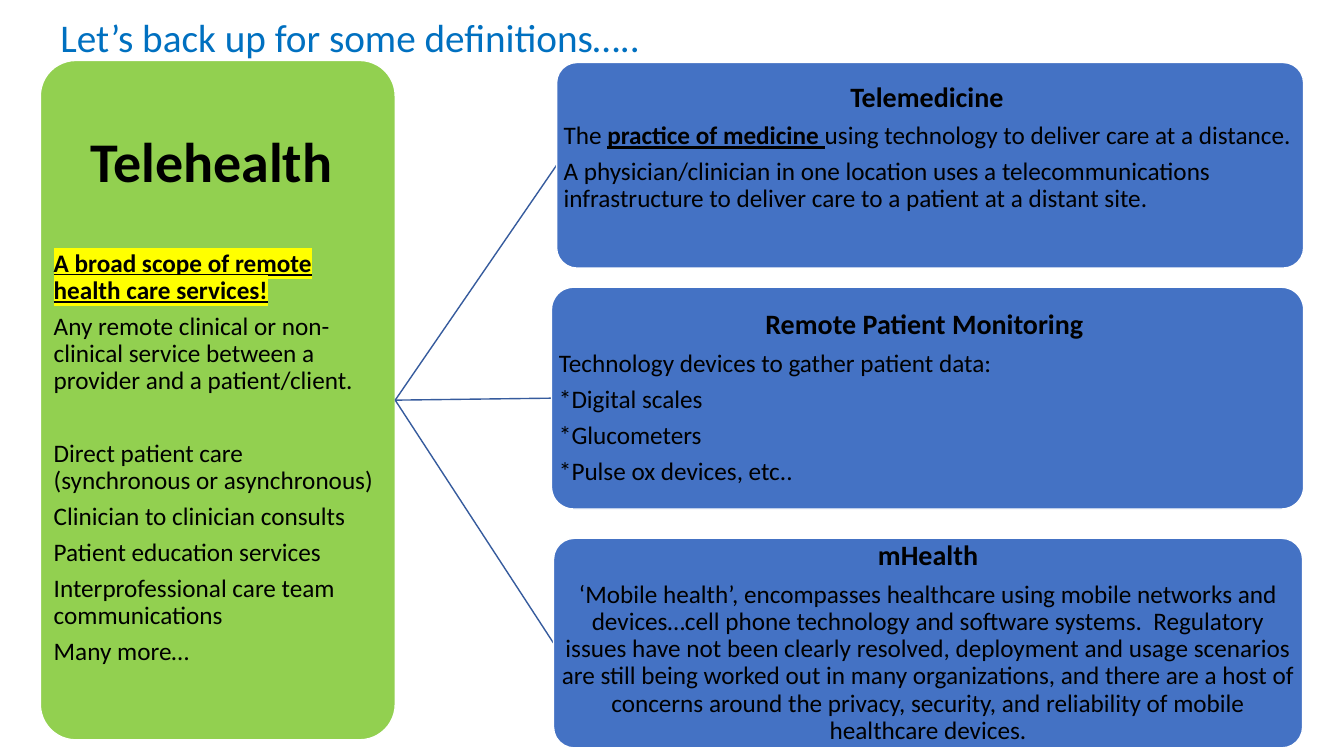
from dataclasses import dataclass

from lxml import etree
from pptx import Presentation
from pptx.dml.color import RGBColor
from pptx.enum.shapes import MSO_CONNECTOR, MSO_SHAPE
from pptx.enum.text import MSO_ANCHOR, PP_ALIGN
from pptx.oxml.ns import qn
from pptx.util import Inches, Pt

LEFT, CENTER = PP_ALIGN.LEFT, PP_ALIGN.CENTER
TOP, MIDDLE = MSO_ANCHOR.TOP, MSO_ANCHOR.MIDDLE
ROUNDED = MSO_SHAPE.ROUNDED_RECTANGLE
STRAIGHT = MSO_CONNECTOR.STRAIGHT
TITLE_ONLY = 5


@dataclass(frozen=True)
class Theme:
    font: str = "Calibri"
    title: str = "0070C0"
    text: str = "000000"
    hub: str = "92D050"
    branch: str = "4472C4"
    outline: str = "FFFFFF"
    link: str = "365B9D"
    marker: str = "FFFF00"
    title_size: int = 28
    hub_size: int = 40
    heading_size: int = 20
    body_size: int = 18
    line_spacing: float = 0.9
    space_ratio: float = 0.35


@dataclass(frozen=True)
class Box:
    left: float
    top: float
    width: float
    height: float

    @property
    def right(self):
        return self.left + self.width

    @property
    def middle(self):
        return self.top + self.height / 2


@dataclass(frozen=True)
class Para:
    """Spans are (text, style) pairs; gap is extra space below in points."""
    spans: tuple
    size: int
    align: PP_ALIGN = LEFT
    gap: float = 0


THEME = Theme()
PLAIN = {}
BOLD = {"bold": True}
STRONG = {"bold": True, "underline": True}
MARKED = {**STRONG, "marker": THEME.marker}
EMPTY_LINE = 25.8


def body(text, style=PLAIN, align=LEFT, gap=0):
    return Para(((text, style),), THEME.body_size, align, gap)


def heading(text, size=THEME.heading_size, gap=0):
    return Para(((text, BOLD),), size, CENTER, gap)


TITLE = "Let’s back up for some definitions….."
TITLE_BOX = Box(0.5, 0.08, 6.02, 0.57)

HUB_BOX = Box(0.4, 0.6, 3.52, 6.74)
HUB_TEXT = (
    heading("Telehealth ", THEME.hub_size, EMPTY_LINE),
    body("A broad scope of remote health care services!", MARKED),
    body("Any remote clinical or non-clinical service between a "
         "provider and a patient/client.", gap=EMPTY_LINE),
    body("Direct patient care (synchronous or asynchronous)"),
    body("Clinician to clinician consults"),
    body("Patient education services"),
    body("Interprofessional care team communications"),
    body("Many more…"),
)

# Each branch: box, paragraphs, extra room below the text in inches
BRANCHES = (
    (Box(5.52, 0.62, 7.41, 2.04), (
        heading("Telemedicine "),
        Para((("The ", PLAIN), ("practice of medicine ", STRONG),
              ("using technology to deliver care at a distance.", PLAIN)),
             THEME.body_size),
        body("A physician/clinician in one location uses a telecommunications "
             "infrastructure to deliver care to a patient at a distant site."),
    ), 0.34),
    (Box(5.47, 2.85, 7.46, 2.2), (
        heading("Remote Patient Monitoring "),
        body("Technology devices to gather patient data:"),
        body("*Digital scales"),
        body("*Glucometers"),
        body("*Pulse ox devices, etc.."),
    ), 0),
    (Box(5.49, 5.34, 7.43, 2.08), (
        heading("mHealth"),
        body("‘Mobile health’, encompasses healthcare using mobile networks "
             "and devices…cell phone technology and software systems.  "
             "Regulatory issues have not been clearly resolved, deployment and "
             "usage scenarios are still being worked out in many organizations, "
             "and there are a host of concerns around the privacy, security, "
             "and reliability of mobile healthcare devices.", align=CENTER),
    ), 0),
)


def format_frame(frame, anchor, wrap, **margins):
    frame.vertical_anchor = anchor
    frame.word_wrap = wrap
    for side, inches in margins.items():
        setattr(frame, f"margin_{side}", Inches(inches))


def add_span(paragraph, text, size, color, marker=None, **style):
    span = paragraph.add_run()
    span.text = text
    values = {"name": THEME.font, "size": Pt(size), "bold": False, **style}
    for name, value in values.items():
        setattr(span.font, name, value)
    span.font.color.rgb = RGBColor.from_string(color)
    if marker:
        highlight = etree.Element(qn("a:highlight"))
        etree.SubElement(highlight, qn("a:srgbClr")).set("val", marker)
        span._r.rPr.find(qn("a:solidFill")).addnext(highlight)


def write_paragraphs(frame, paras):
    for index, para in enumerate(paras):
        paragraph = frame.add_paragraph() if index else frame.paragraphs[0]
        values = {"alignment": para.align,
                  "line_spacing": THEME.line_spacing,
                  "space_after": Pt(para.size * THEME.space_ratio + para.gap)}
        for name, value in values.items():
            setattr(paragraph, name, value)
        for text, style in para.spans:
            add_span(paragraph, text, para.size, THEME.text, **style)


def place_title(page, box):
    title = page.shapes.title
    for name in ("left", "top", "width", "height"):
        setattr(title, name, Inches(getattr(box, name)))
    format_frame(title.text_frame, TOP, False,
                 left=0.1, right=0.1, top=0.05, bottom=0.05)
    paragraph = title.text_frame.paragraphs[0]
    paragraph.alignment = LEFT
    add_span(paragraph, TITLE, THEME.title_size, THEME.title)


def add_card(page, box, paras, color, inset, room_below=0):
    """The rounded corners add their own inset to the one given."""
    card = page.shapes.add_shape(ROUNDED, Inches(box.left), Inches(box.top),
                                 Inches(box.width), Inches(box.height))
    card.adjustments[0] = 0.1
    card.shadow.inherit = False
    card.fill.solid()
    card.fill.fore_color.rgb = RGBColor.from_string(color)
    card.line.color.rgb = RGBColor.from_string(THEME.outline)
    card.line.width = Pt(1)
    format_frame(card.text_frame, MIDDLE, True, left=inset, right=inset,
                 top=inset, bottom=inset + room_below)
    write_paragraphs(card.text_frame, paras)


def add_link(page, start, end):
    """Joins the right side of one box to the left side of another."""
    link = page.shapes.add_connector(
        STRAIGHT, Inches(start.right), Inches(start.middle),
        Inches(end.left), Inches(end.middle))
    link.line.color.rgb = RGBColor.from_string(THEME.link)
    link.line.width = Pt(1)
    etree.SubElement(link._element.spPr, qn("a:effectLst"))


def build_definitions(page):
    place_title(page, TITLE_BOX)
    add_card(page, HUB_BOX, HUB_TEXT, THEME.hub, 0.03)
    for box, paras, room_below in BRANCHES:
        add_link(page, HUB_BOX, box)
        add_card(page, box, paras, THEME.branch, 0.01, room_below)


def main():
    deck = Presentation()
    deck.slide_width, deck.slide_height = Inches(13.33), Inches(7.5)
    build_definitions(deck.slides.add_slide(deck.slide_layouts[TITLE_ONLY]))
    deck.save("out.pptx")


if __name__ == "__main__":
    main()
